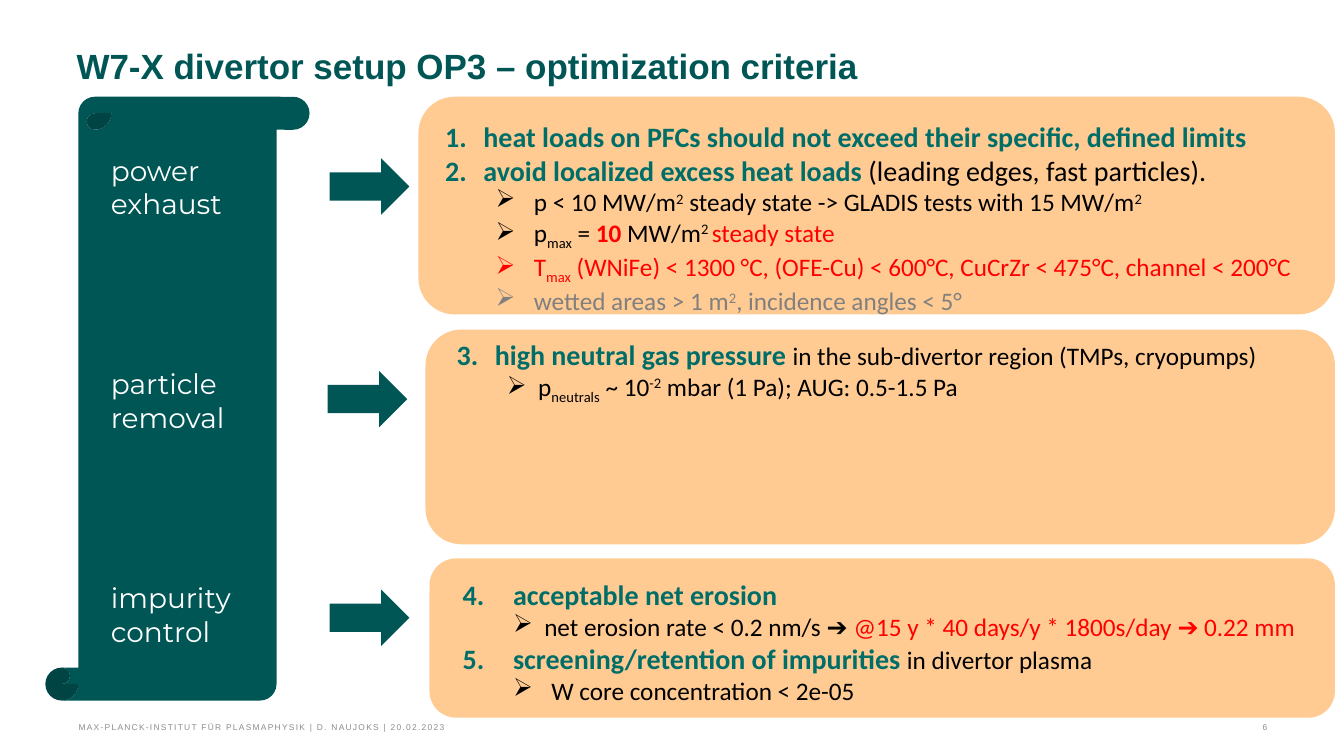
from lxml import etree
from pptx import Presentation
from pptx.dml.color import RGBColor
from pptx.enum import shapes, text
from pptx.oxml import ns
from pptx.util import Inches, Pt

GREEN = RGBColor(0x00, 0x55, 0x55)
TEAL = RGBColor(0x00, 0x6E, 0x68)
PEACH = RGBColor(0xFF, 0xCB, 0x93)
RED = RGBColor(0xFF, 0x00, 0x00)
GRAY = RGBColor(0x80, 0x80, 0x80)
FOOTER_GRAY = RGBColor(0x8C, 0x8C, 0x8C)
BLACK = RGBColor(0x00, 0x00, 0x00)
WHITE = RGBColor(0xFF, 0xFF, 0xFF)

HEAD = (20, TEAL, True)
LARGE = (20, BLACK, False)
BODY = (18, BLACK, False)
ALERT = (18, RED, False)
STRONG = (18, RED, True)
MUTED = (18, GRAY, False)
SUPER, SUB = 30000, -25000

TITLE = "W7-X divertor setup OP3 – optimization criteria"
FOOTER = "MAX-PLANCK-INSTITUT FÜR PLASMAPHYSIK | D. NAUJOKS | 20.02.2023"
PAGE_NUMBER = "6"
GOALS = [("power", 0), ("exhaust", 0), ("particle removal", 104.6), ("impurity control", 104.6)]
ARROWS = [(3.27, 1.57), (3.25, 3.68), (3.27, 5.85)]
PANELS = [(4.26, 5.54, 8.98, 1.58), (4.22, 3.27, 9.02, 2.13), (4.15, 0.96, 9.09, 2.16)]

# level, indent, hanging, runs
POWER = [
    (0, 0.38, 0.38, [("heat loads on PFCs should not exceed their specific, defined limits", HEAD)]),
    (0, 0.38, 0.38, [("avoid localized excess heat loads ", HEAD),
                     ("(leading edges, fast particles).", LARGE)]),
    (1, 0.88, 0.38, [("p < 10 MW/m", BODY), ("2", BODY, SUPER),
                     (" steady state -> GLADIS tests with 15 MW/m", BODY), ("2", BODY, SUPER)]),
    (1, 0.88, 0.38, [("p", BODY), ("max", BODY, SUB), (" = ", BODY), ("10", STRONG),
                     (" MW/m", BODY), ("2 ", BODY, SUPER), ("steady state", ALERT)]),
    (1, 0.88, 0.38, [("T", ALERT), ("max", ALERT, SUB),
                     (" (WNiFe) < 1300 °C, (OFE-Cu) < 600°C, CuCrZr < 475°C, channel < 200°C", ALERT)]),
    (1, 0.88, 0.38, [("wetted areas > 1 m", MUTED), ("2", MUTED, SUPER),
                     (", incidence angles < 5°", MUTED)]),
]
PARTICLES = [
    (0, 0.38, 0.38, [("high neutral gas pressure ", HEAD),
                     ("in the sub-divertor region (TMPs, cryopumps)", BODY)]),
    (1, 0.81, 0.31, [("p", BODY), ("neutrals", BODY, SUB), (" ~ 10", BODY), ("-2", BODY, SUPER),
                     (" mbar (1 Pa); AUG: 0.5-1.5 Pa", BODY)]),
]
IMPURITIES = [
    (0, 0.5, 0.5, [("acceptable net erosion", HEAD)]),
    (1, 0.81, 0.31, [("net erosion rate < 0.2 nm/s ➔ ", BODY),
                     ("@15 y * 40 days/y * 1800s/day ➔ 0.22 mm", ALERT)]),
    (0, 0.5, 0.5, [("screening/retention of impurities ", HEAD), ("in divertor plasma", BODY)]),
    (1, 0.88, 0.38, [("W core concentration < 2e-05", BODY)]),
]

deck = Presentation()
deck.slide_width, deck.slide_height = Inches(13.33), Inches(7.5)
page = deck.slides.add_slide(deck.slide_layouts[6])


def add_block(kind, place, fill):
    block = page.shapes.add_shape(kind, *map(Inches, place))
    block.shadow.inherit = False
    block.fill.solid()
    block.fill.fore_color.rgb = fill
    block.line.fill.background()
    return block


def set_frame(frame, insets, anchor=text.MSO_ANCHOR.TOP):
    frame.word_wrap = True
    frame.vertical_anchor = anchor
    (frame.margin_left, frame.margin_top,
     frame.margin_right, frame.margin_bottom) = map(Inches, insets)
    return frame


def add_text(place, insets=(0, 0, 0, 0), anchor=text.MSO_ANCHOR.TOP):
    return set_frame(page.shapes.add_textbox(*map(Inches, place)).text_frame, insets, anchor)


def add_span(para, words, font, style, baseline=0, spacing=0):
    span = para.add_run()
    span.text = words
    span.font.name = font
    size, span.font.color.rgb, span.font.bold = style
    span.font.size = Pt(size)
    for name, value in (("baseline", baseline), ("spc", spacing)):
        if value:
            span.font._element.set(name, str(value))


def next_para(frame, index):
    para = frame.add_paragraph() if index else frame.paragraphs[0]
    para.alignment = text.PP_ALIGN.LEFT
    return para


def write_list(frame, items, start):
    for index, (level, indent, hanging, runs) in enumerate(items):
        para = next_para(frame, index)
        para.level = level
        props = para._p.get_or_add_pPr()
        props.set("marL", str(Inches(indent)))
        props.set("indent", str(-Inches(hanging)))
        if level:
            etree.SubElement(props, ns.qn("a:buChar")).set("char", "➢")
        else:
            number = etree.SubElement(props, ns.qn("a:buAutoNum"))
            number.set("type", "arabicPeriod")
            number.set("startAt", str(start))
        for words, style, *baseline in runs:
            add_span(para, words, "Calibri", style, *baseline)


panels = [add_block(shapes.MSO_SHAPE.ROUNDED_RECTANGLE, place, PEACH) for place in PANELS]
write_list(set_frame(panels[-1].text_frame, (0.16, 0.12, 0.16, 0.16)), POWER, 1)

title = add_text((0.76, 0.47, 10.47, 0.45)).paragraphs[0]
title.line_spacing = Pt(28)
add_span(title, TITLE, "Arial", (25, GREEN, True))

for words, left, width, alignment in (
        (FOOTER, 0.78, 11.4, text.PP_ALIGN.LEFT),
        (PAGE_NUMBER, 12.21, 0.36, text.PP_ALIGN.RIGHT)):
    para = add_text((left, 7.1, width, 0.16), anchor=text.MSO_ANCHOR.BOTTOM).paragraphs[0]
    para.alignment = alignment
    add_span(para, words, "Arial", (6, FOOTER_GRAY, False), spacing=90)

add_block(shapes.MSO_SHAPE.VERTICAL_SCROLL, (0.45, 0.96, 2.62, 5.99), GREEN)
goals = add_text((1, 1.47, 1.81, 5.39), (0.1, 0.05, 0.1, 0.05))
for index, (words, gap) in enumerate(GOALS):
    para = next_para(goals, index)
    if gap:
        para.space_before = Pt(gap)
    add_span(para, words, "Montserrat", (20, WHITE, False))

for left, top in ARROWS:
    add_block(shapes.MSO_SHAPE.RIGHT_ARROW, (left, top, 0.79, 0.56), GREEN)

for place, items, start in (((4.43, 3.3, 8.22, 0.74), PARTICLES, 3),
                            ((4.49, 5.68, 8.67, 1.38), IMPURITIES, 4)):
    write_list(add_text(place, (0.1, 0.05, 0.1, 0.05)), items, start)

deck.save("out.pptx")
